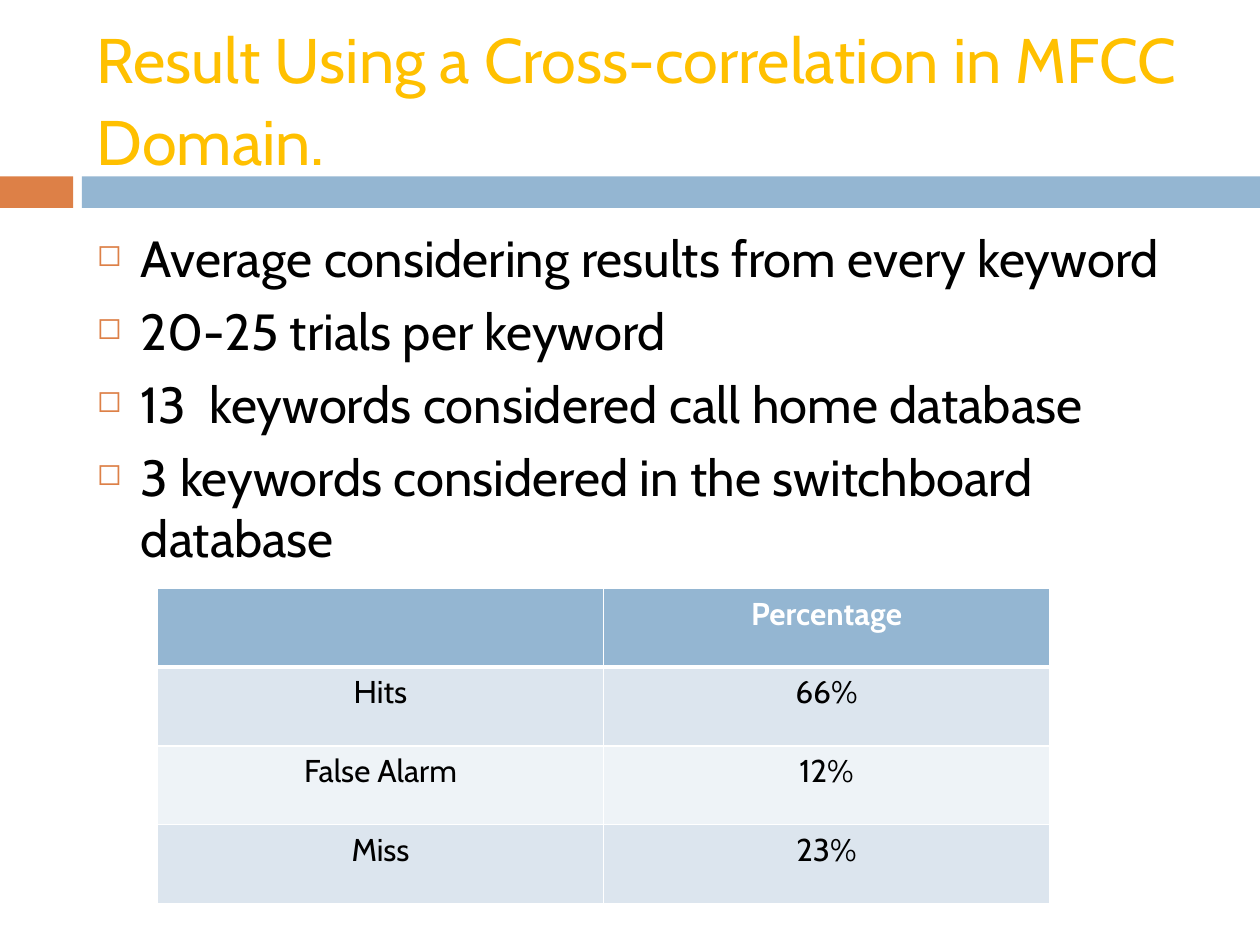
import pptx
import pptx.dml.color
import pptx.enum.shapes
import pptx.enum.text
import pptx.oxml
import pptx.oxml.ns
import pptx.util
from lxml import etree

W, H = 10, 7.5
FONT = "Cabin"
ORANGE, BLUE, GOLD = "DD8047", "94B6D2", "FFC000"
BLACK, WHITE = "000000", "FFFFFF"
BANDS = ["DCE5EE", "EEF3F7"]

TITLE = [("Result Using a Cross-correlation in MFCC Domain", 36), (".", 39.6)]
POINTS = [
    "Average considering results from every keyword",
    "20-25 trials per keyword",
    "13  keywords considered call home database",
    "3 keywords considered in the switchboard database",
]
ROWS = [("", "Percentage"), ("Hits", "66%"), ("False Alarm", "12%"), ("Miss", "23%")]


def color(value):
    return pptx.dml.color.RGBColor.from_string(value)


def box(x, y, w, h):
    """Turn inches into the four lengths of a shape."""
    return [pptx.util.Inches(v) for v in (x, y, w, h)]


def sub(parent, tag, **attrs):
    return etree.SubElement(parent, pptx.oxml.ns.qn(tag), attrs)


def style(font, value, **formats):
    formats = {"name": FONT, **formats}
    for key, item in formats.items():
        setattr(font, key, item)
    font.color.rgb = color(value)


def add_bar(s, x, w, fill):
    sp = s.shapes.add_shape(pptx.enum.shapes.MSO_SHAPE.RECTANGLE, *box(x, 1.4, w, 0.25))
    sp.shadow.inherit = False
    sp.fill.solid()
    sp.fill.fore_color.rgb = color(fill)
    sp.line.fill.background()


def add_text(s, y, h, anchor):
    tf = s.shapes.add_textbox(*box(0.67, y, 8.92, h)).text_frame
    tf.word_wrap = True
    tf.vertical_anchor = anchor
    return tf


def add_title(s):
    tf = add_text(s, 0.25, 1.08, pptx.enum.text.MSO_ANCHOR.MIDDLE)
    for text, size in TITLE:
        r = tf.paragraphs[0].add_run()
        r.text = text
        style(r.font, GOLD, size=pptx.util.Pt(size))


def add_bullet(p):
    pPr = p._p.get_or_add_pPr()
    indent = pptx.util.Inches(0.35)
    pPr.set("marL", str(indent))
    pPr.set("indent", str(-indent))
    sub(sub(pPr, "a:buClr"), "a:srgbClr", val=ORANGE)
    sub(pPr, "a:buSzPct", val="60000")
    sub(pPr, "a:buChar", char="◻")


def add_points(s):
    tf = add_text(s, 1.75, 4.92, pptx.enum.text.MSO_ANCHOR.TOP)
    for i, text in enumerate(POINTS):
        p = tf.add_paragraph() if i else tf.paragraphs[0]
        add_bullet(p)
        if i:
            p.space_before = pptx.util.Pt(7)
        r = p.add_run()
        r.text = text
        style(r.font, BLACK, size=pptx.util.Pt(29))


def add_borders(cell, widths):
    """Draw white borders; they stand before the fill in the cell's XML."""
    tcPr = cell._tc.get_or_add_tcPr()
    for side, width in widths.items():
        ln = sub(tcPr, f"a:ln{side}", w=str(pptx.util.Pt(width)))
        sub(sub(ln, "a:solidFill"), "a:srgbClr", val=WHITE)


def add_results(s):
    rows, cols = len(ROWS), len(ROWS[0])
    table = s.shapes.add_table(rows, cols, *box(W / 8, 4.67, 7.08, H / 3)).table
    for i, row in enumerate(ROWS):
        head = i == 0
        for j, text in enumerate(row):
            cell = table.cell(i, j)
            add_borders(cell, {"L": 1, "R": 1, "T": 3 if i == 1 else 1, "B": 3 if head else 1})
            cell.fill.solid()
            cell.fill.fore_color.rgb = color(BLUE if head else BANDS[(i - 1) % 2])
            p = cell.text_frame.paragraphs[0]
            p.alignment = pptx.enum.text.PP_ALIGN.CENTER
            if text:
                r = p.add_run()
                r.text = text
                style(r.font, WHITE if head else BLACK, size=pptx.util.Pt(18), bold=head)


def main():
    prs = pptx.Presentation()
    prs.slide_width, prs.slide_height = pptx.util.Inches(W), pptx.util.Inches(H)
    s = prs.slides.add_slide(prs.slide_layouts[6])

    # Divider under the title
    add_bar(s, 0, 0.58, ORANGE)
    add_bar(s, 0.65, W - 0.65, BLUE)

    # Title, bullet points and result table
    add_title(s)
    add_points(s)
    add_results(s)

    prs.save("out.pptx")


if __name__ == "__main__":
    main()
